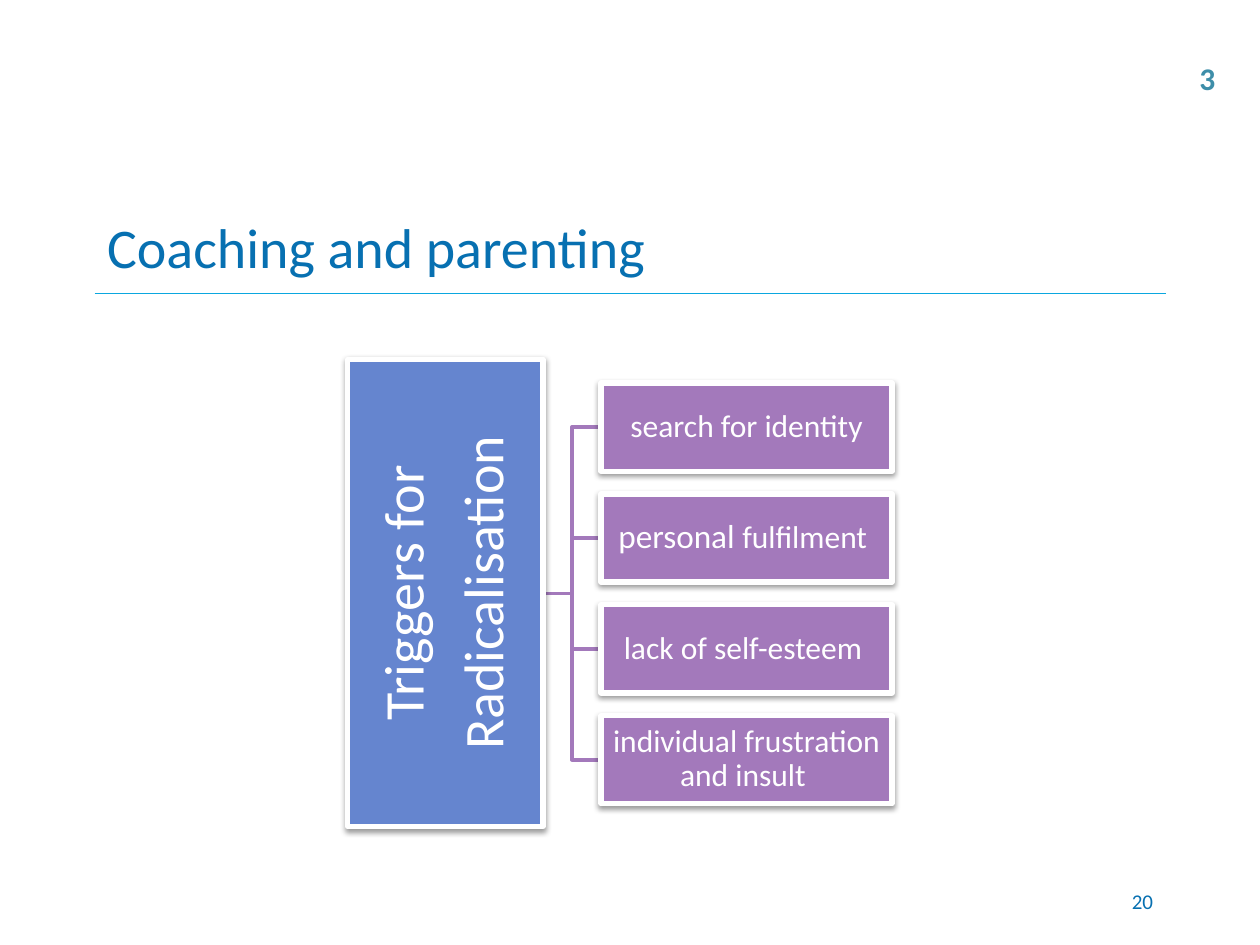
from dataclasses import dataclass

from lxml import etree
from pptx import Presentation
from pptx import util as u
from pptx.dml.color import RGBColor
from pptx.enum import shapes, text
from pptx.oxml import ns


@dataclass(frozen=True)
class Theme:
    font: str = "Calibri"
    ink: str = "0770B1"
    rule: str = "0BA7DF"
    teal: str = "3E8EA9"
    blue: str = "6585CF"
    plum: str = "A379BB"
    white: str = "FFFFFF"
    big: int = 32
    wide: int = 19
    body: int = 18
    small: int = 12


T = Theme()
SHADE = (
    f'<a:effectLst {ns.nsdecls("a")}>'
    '<a:outerShdw blurRad="39370" dist="20320" dir="5400000" rotWithShape="0">'
    '<a:srgbClr val="000000"><a:alpha val="38000"/></a:srgbClr>'
    "</a:outerShdw></a:effectLst>"
)


def write(para, words, size, color, align=text.PP_ALIGN.LEFT, bold=False):
    para.alignment = align
    run = para.add_run()
    run.text = words
    run.font.name = T.font
    run.font.size = u.Pt(size)
    run.font.bold = bold
    run.font.color.rgb = RGBColor.from_string(color)


def add_card(left, top, width, height, fill, inset):
    """Add a white-edged box with a soft shadow and centred text."""
    card = slide.shapes.add_shape(
        shapes.MSO_SHAPE.RECTANGLE,
        u.Inches(left), u.Inches(top), u.Inches(width), u.Inches(height))
    card.fill.solid()
    card.fill.fore_color.rgb = RGBColor.from_string(fill)
    card.line.color.rgb = RGBColor.from_string(T.white)
    card.line.width = u.Pt(3)
    card._element.spPr.append(etree.fromstring(SHADE))
    frame = card.text_frame
    frame.word_wrap = True
    frame.vertical_anchor = text.MSO_ANCHOR.MIDDLE
    frame.margin_left = frame.margin_right = u.Inches(inset)
    frame.margin_top = frame.margin_bottom = u.Inches(inset)
    frame.paragraphs[0].line_spacing = 0.9
    return card


deck = Presentation()
deck.slide_width, deck.slide_height = u.Inches(10), u.Inches(7.5)
slide = deck.slides.add_slide(deck.slide_layouts[5])

# Title and rule
title = slide.shapes.title
title.left, title.top = u.Inches(0.75), u.Inches(1.58)
title.width, title.height = u.Inches(8.5), u.Inches(0.75)
title.text_frame.vertical_anchor = text.MSO_ANCHOR.MIDDLE
write(title.text_frame.paragraphs[0], "Coaching and parenting", T.big, T.ink)

rule = slide.shapes.add_connector(
    shapes.MSO_CONNECTOR.STRAIGHT,
    u.Inches(0.75), u.Inches(2.33), u.Inches(9.25), u.Inches(2.33))
rule.line.color.rgb = RGBColor.from_string(T.rule)
rule.line.width = u.Pt(0.75)
etree.SubElement(rule._element.spPr, ns.qn("a:effectLst"))

# Page numbers
page = slide.shapes.add_textbox(
    u.Inches(7.17), u.Inches(6.95), u.Inches(2.08), u.Inches(0.4)).text_frame
page.word_wrap = True
page.vertical_anchor = text.MSO_ANCHOR.MIDDLE
write(page.paragraphs[0], "20", T.small, T.ink, text.PP_ALIGN.RIGHT)

part = slide.shapes.add_textbox(
    u.Inches(9.42), u.Inches(0.42), u.Inches(0.33), u.Inches(0.4)).text_frame
part.word_wrap = False
part.auto_size = text.MSO_AUTO_SIZE.SHAPE_TO_FIT_TEXT
write(part.paragraphs[0], "3", T.body, T.teal, bold=True)

# Tree: one root on the left, causes stacked on the right
causes = [
    [("search for identity", T.body)],
    [("personal ", T.wide), ("fulfilment", T.body), (" ", T.wide)],
    [("lack of self-esteem ", T.body)],
    [("individual frustration and insult ", T.body)],
]
stem, leaf, mid = 4.31, 4.77, 4.71
wide, high, step = 2.31, 0.7, 0.88
bend = (stem + leaf) / 2
first = mid - step * (len(causes) - 1) / 2
rows = [first + step * i for i in range(len(causes))]

for row in rows:
    pen = slide.shapes.build_freeform(
        u.Inches(stem), u.Inches(mid), scale=1.0)
    pen.add_line_segments(
        [(u.Inches(x), u.Inches(y))
         for x, y in ((bend, mid), (bend, row), (leaf, row))], close=False)
    link = pen.convert_to_shape()
    link.fill.background()
    link.line.color.rgb = RGBColor.from_string(T.plum)
    link.line.width = u.Pt(2)
    link.shadow.inherit = False

root = add_card(1.68, 3.93, 3.71, 1.55, T.blue, 0.02)
root.rotation = 270
head = root.text_frame.paragraphs[0]
head.space_after = u.Pt(11)
write(head, "Triggers for", T.big, T.white, text.PP_ALIGN.CENTER)
tail = root.text_frame.add_paragraph()
tail.line_spacing = 0.9
write(tail, "Radicalisation", T.big, T.white, text.PP_ALIGN.CENTER)

for row, cause in zip(rows, causes):
    card = add_card(leaf, row - high / 2, wide, high, T.plum, 0.01)
    for words, size in cause:
        write(card.text_frame.paragraphs[0], words, size, T.white,
              text.PP_ALIGN.CENTER)

deck.save("out.pptx")
